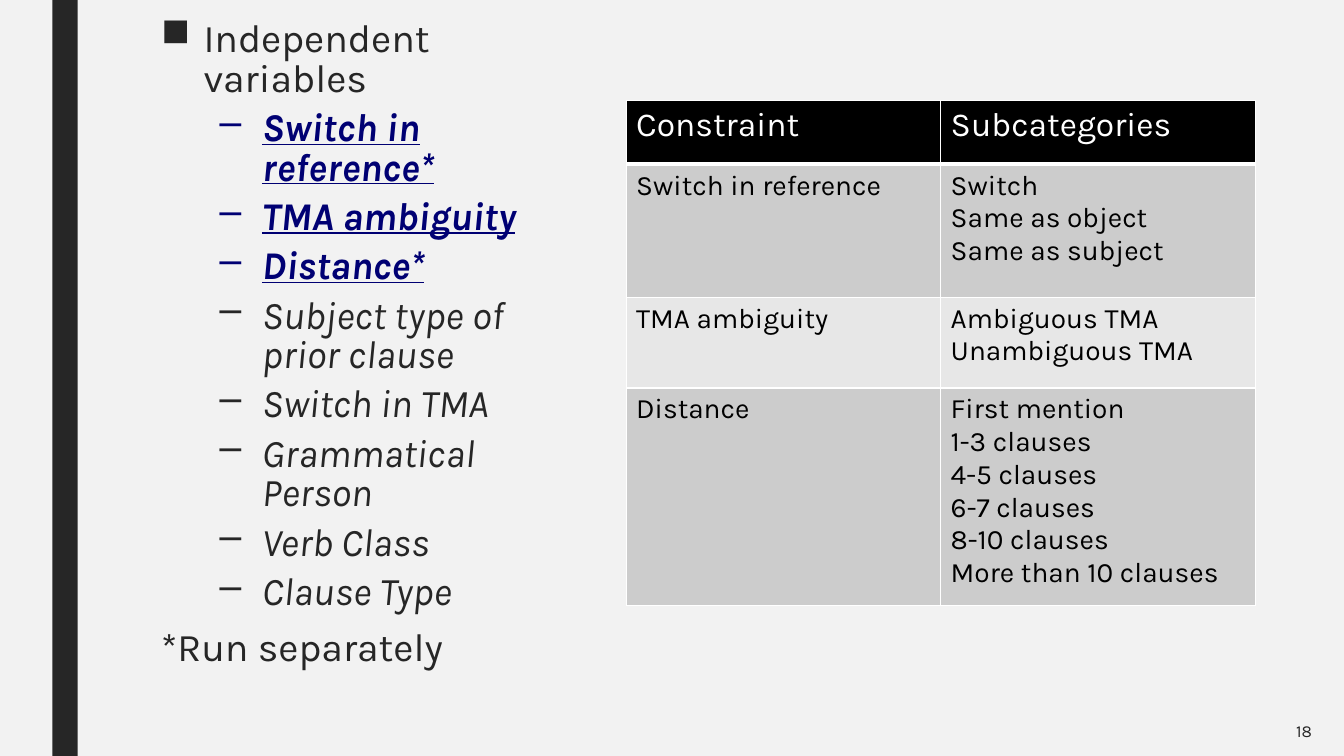
import pptx
import pptx.util
import pptx.dml.color
import pptx.enum.shapes
import pptx.enum.text
import pptx.oxml
import pptx.oxml.ns
import lxml.etree

Inches = pptx.util.Inches
Pt = pptx.util.Pt
RGBColor = pptx.dml.color.RGBColor

PAPER = RGBColor(0xF2, 0xF2, 0xF2)
INK = RGBColor(0x26, 0x26, 0x26)
NAVY = RGBColor(0x00, 0x00, 0x73)
BLACK = RGBColor(0x00, 0x00, 0x00)
WHITE = RGBColor(0xFF, 0xFF, 0xFF)
DARK_BAND = RGBColor(0xCC, 0xCC, 0xCC)
LIGHT_BAND = RGBColor(0xE7, 0xE7, 0xE7)


def style(para, size, color):
    para.font.name = "Karla"
    para.font.size = Pt(size)
    para.font.color.rgb = color


def add_border(cell, side, width):
    line = pptx.oxml.parse_xml(
        f'<a:{side} {pptx.oxml.ns.nsdecls("a")} w="{Pt(width)}">'
        f'<a:solidFill><a:srgbClr val="{WHITE}"/></a:solidFill></a:{side}>'
    )
    cell._tc.get_or_add_tcPr().append(line)


deck = pptx.Presentation()
deck.slide_width = Inches(13.33)
deck.slide_height = Inches(7.5)
page = deck.slides.add_slide(deck.slide_layouts[6])
page.background.fill.solid()
page.background.fill.fore_color.rgb = PAPER

side_bar = page.shapes.add_shape(
    pptx.enum.shapes.MSO_SHAPE.RECTANGLE, Inches(0.52), 0, Inches(0.25), Inches(7.5)
)
side_bar.shadow.inherit = False
side_bar.fill.solid()
side_bar.fill.fore_color.rgb = INK
side_bar.line.fill.background()

variables = [
    ("Independent variables", "heading"),
    ("Switch in reference*", "key"),
    ("TMA ambiguity", "key"),
    ("Distance*", "key"),
    ("Subject type of prior clause", "item"),
    ("Switch in TMA", "item"),
    ("Grammatical Person", "item"),
    ("Verb Class", "item"),
    ("Clause Type", "item"),
    ("*Run separately", "note"),
]
bullets = {"heading": ("■", 0.42), "key": ("–", 1), "item": ("–", 1)}

outline = page.shapes.add_textbox(Inches(1.5), Inches(0.16), Inches(4.25), Inches(7.1))
outline.text_frame.word_wrap = True
for index, (text, kind) in enumerate(variables):
    para = outline.text_frame.paragraphs[0] if index == 0 else outline.text_frame.add_paragraph()
    para.text = text
    nested = kind in ("key", "item")
    para.level = 1 if nested else 0
    para.line_spacing = 0.84
    para.space_before = Pt(5 if nested else 10)
    para.space_after = Pt(2)
    if kind in bullets:
        mark, margin = bullets[kind]
        properties = para._p.get_or_add_pPr()
        properties.set("marL", str(Inches(margin)))
        properties.set("indent", str(Inches(-0.42)))
        bullet = lxml.etree.SubElement(properties, pptx.oxml.ns.qn("a:buChar"))
        bullet.set("char", mark)
    style(para, 28, NAVY if kind == "key" else INK)
    para.font.italic = nested
    para.font.bold = kind == "key"
    para.font.underline = kind == "key"

constraints = [
    ("Constraint", ["Subcategories"]),
    ("Switch in reference", ["Switch", "Same as object", "Same as subject"]),
    ("TMA ambiguity", ["Ambiguous TMA", "Unambiguous TMA"]),
    ("Distance", ["First mention", "1-3 clauses", "4-5 clauses", "6-7 clauses",
                  "8-10 clauses", "More than 10 clauses"]),
]
row_heights = [0.63, 1.32, 0.9, 2.16]
row_fills = [BLACK, DARK_BAND, LIGHT_BAND, DARK_BAND]

table = page.shapes.add_table(
    len(constraints), 2, Inches(6.21), Inches(1), Inches(6.24), Inches(sum(row_heights))
).table
for column in table.columns:
    column.width = Inches(3.12)
for row_index, (constraint, subcategories) in enumerate(constraints):
    header = row_index == 0
    table.rows[row_index].height = Inches(row_heights[row_index])
    for column_index, lines in enumerate([[constraint], subcategories]):
        cell = table.cell(row_index, column_index)
        cell.text = "\n".join(lines)
        for side in ("lnL", "lnR", "lnT", "lnB"):
            add_border(cell, side, 3 if header and side == "lnB" else 1)
        cell.fill.solid()
        cell.fill.fore_color.rgb = row_fills[row_index]
        for para in cell.text_frame.paragraphs:
            style(para, 24 if header else 20, WHITE if header else BLACK)
            para.font.bold = False

number_box = page.shapes.add_textbox(Inches(11.36), Inches(7.03), Inches(1.75), Inches(0.44))
number_box.text_frame.word_wrap = True
number_box.text_frame.vertical_anchor = pptx.enum.text.MSO_ANCHOR.MIDDLE
number = number_box.text_frame.paragraphs[0]
number.text = "18"
number.alignment = pptx.enum.text.PP_ALIGN.RIGHT
style(number, 12, INK)

deck.save("out.pptx")
